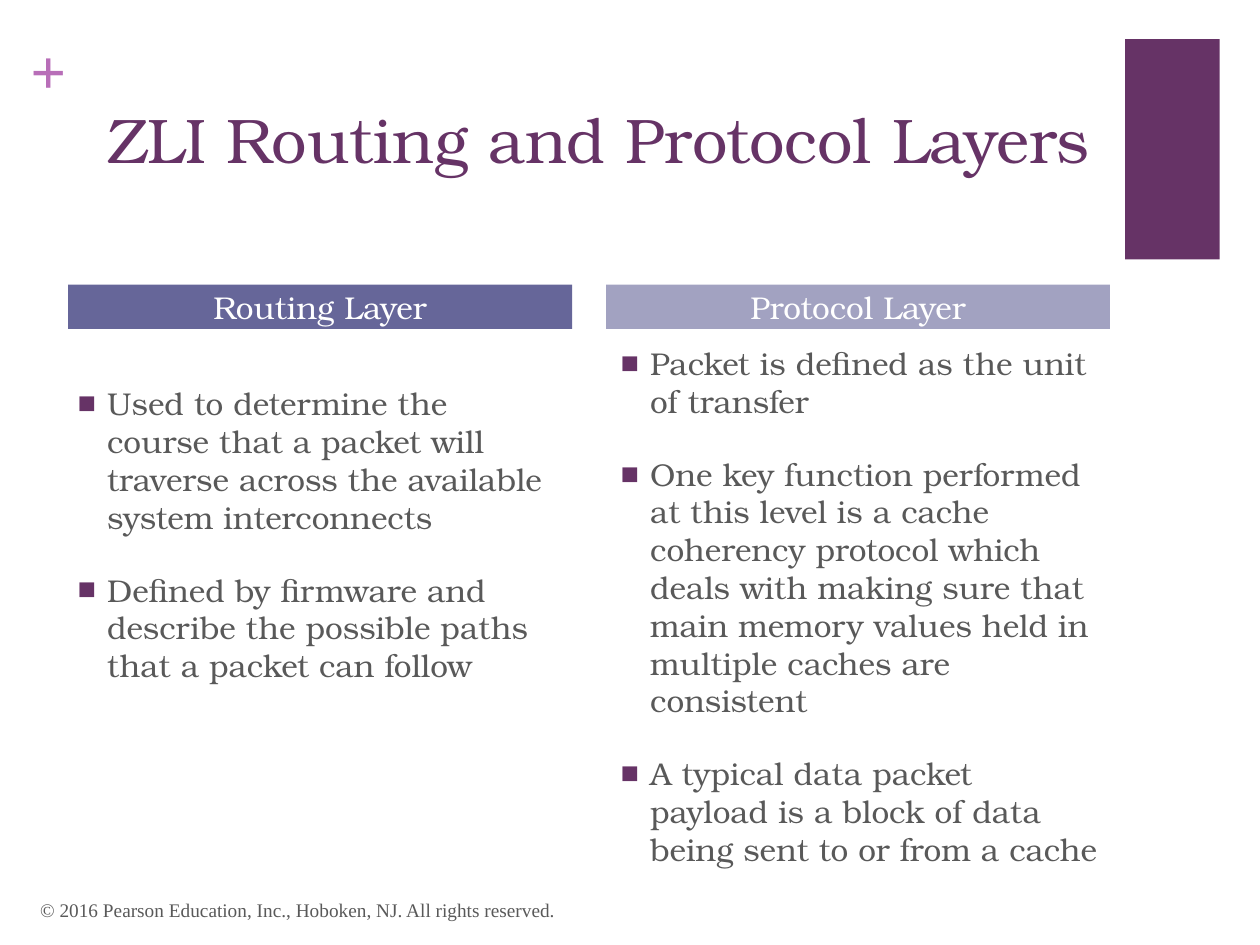
from dataclasses import dataclass

from lxml import etree
from pptx import Presentation, util as u
from pptx.dml.color import RGBColor
from pptx.enum import shapes, text
from pptx.oxml.ns import qn


@dataclass(frozen=True)
class Theme:
    """Colours, fonts and type sizes of the deck."""
    plum: str = "663366"
    orchid: str = "B86EB8"
    slate: str = "666699"
    lavender: str = "A2A2C1"
    grey: str = "595959"
    white: str = "FFFFFF"
    serif: str = "TeX Gyre Bonum"
    roman: str = "Times New Roman"
    title: int = 36
    body: int = 18
    footer: int = 11
    gap: int = 20


T = Theme()
UNIT = u.Inches(0.1)
MARGINS = (1, 0.5, 1, 0.5)
TOP, MIDDLE = text.MSO_ANCHOR.TOP, text.MSO_ANCHOR.MIDDLE
LEFT, CENTER = text.PP_ALIGN.LEFT, text.PP_ALIGN.CENTER

COLUMNS = [
    dict(box=(5.4, 22.6, 40, 3.5), fill=T.slate, heading="Routing Layer",
         offset=(-0.4, 7.4), rows=40.2, items=[
             "Used to determine the course that a packet will traverse across "
             "the available system interconnects",
             "Defined by firmware and describe the possible paths that a packet "
             "can follow"]),
    dict(box=(48.1, 22.6, 40, 3.5), fill=T.lavender, heading="Protocol Layer",
         offset=(0, 4.2), rows=44.9, items=[
             "Packet is defined as the unit of transfer",
             "One key function performed at this level is a cache coherency "
             "protocol which deals with making sure that main memory values "
             "held in multiple caches are consistent",
             "A typical data packet payload is a block of data being sent to or "
             "from a cache"]),
]


def grid(*cells):
    """Turn columns and rows of the 100 by 75 grid into lengths."""
    return [u.Emu(int(c * UNIT)) for c in cells]


def place(sp, box):
    """Set a shape on its grid box."""
    for name, value in zip(("left", "top", "width", "height"), grid(*box)):
        setattr(sp, name, value)


def paint(sp, color):
    """Give a shape a plain fill without a line."""
    sp.fill.solid()
    sp.fill.fore_color.rgb = RGBColor.from_string(color)
    sp.line.fill.background()


def bullet(p):
    """Give a paragraph a square plum bullet with a hanging indent."""
    pPr = p._p.get_or_add_pPr()
    hang = u.Inches(0.25)
    pPr.set("marL", str(hang))
    pPr.set("indent", str(-hang))
    clr = etree.SubElement(pPr, qn("a:buClr"))
    etree.SubElement(clr, qn("a:srgbClr"), val=T.plum)
    etree.SubElement(pPr, qn("a:buFont"), typeface=T.serif)
    etree.SubElement(pPr, qn("a:buChar"), char="■")


def plain(p):
    """Remove the bullet and indent of a paragraph."""
    pPr = p._p.get_or_add_pPr()
    pPr.set("marL", "0")
    pPr.set("indent", "0")
    etree.SubElement(pPr, qn("a:buNone"))


def write(sp, lines, size, color, font=T.serif, bold=False, align=LEFT,
          anchor=TOP, margins=MARGINS, mark=plain):
    """Fill a shape with formatted paragraphs."""
    tf = sp.text_frame
    sides = ("margin_left", "margin_top", "margin_right", "margin_bottom")
    frame = dict(zip(sides, grid(*margins)), word_wrap=True,
                 vertical_anchor=anchor, auto_size=text.MSO_AUTO_SIZE.NONE)
    for name, value in frame.items():
        setattr(tf, name, value)
    for i, line in enumerate(lines):
        p = tf.add_paragraph() if i else tf.paragraphs[0]
        mark(p)
        p.alignment = align
        p.space_before = u.Pt(T.gap if i else 0)
        r = p.add_run()
        r.text = line
        for name, value in dict(name=font, size=u.Pt(size), bold=bold).items():
            setattr(r.font, name, value)
        r.font.color.rgb = RGBColor.from_string(color)


def decoration(s, block, plus):
    """Draw the corner block and the plus sign."""
    sp = s.shapes.add_shape(shapes.MSO_SHAPE.RECTANGLE, *grid(*block))
    sp.shadow.inherit = False
    paint(sp, T.plum)
    write(s.shapes.add_textbox(*grid(*plus)), ["+"], T.title, T.orchid,
          T.roman, bold=True, margins=(0, 0, 0, 0))


def heading(s, box):
    """Write the slide title."""
    sp = s.shapes.title
    place(sp, box)
    write(sp, ["ZLI Routing and Protocol Layers"], T.title, T.plum)


def column(head, body, col):
    """Write one layer: a heading bar with a list below it."""
    x, y, w, h = col["box"]
    dx, dy = col["offset"]
    place(head, col["box"])
    paint(head, col["fill"])
    write(head, [col["heading"]], T.body, T.white, align=CENTER,
          anchor=MIDDLE, margins=(1, 0, 1, 0))
    place(body, (x + dx, y + dy, w, col["rows"]))
    write(body, col["items"], T.body, T.grey, mark=bullet)


def footer(s, box):
    """Write the copyright line."""
    write(s.shapes.add_textbox(*grid(*box)),
          ["© 2016 Pearson Education, Inc., Hoboken, NJ. All rights reserved."],
          T.footer, T.grey, T.roman, anchor=MIDDLE)


def main():
    """Build and save the comparison slide."""
    prs = Presentation()
    prs.slide_width, prs.slide_height = grid(100, 75)
    s = prs.slides.add_slide(prs.slide_layouts[4])
    decoration(s, (89.3, 3.1, 7.5, 17.5), (2.4, 2.5, 2.9, 6.1))
    heading(s, (7.5, 7.5, 82.6, 12.2))
    ph = s.placeholders
    for i, col in enumerate(COLUMNS):
        column(ph[2 * i + 1], ph[2 * i + 2], col)
    footer(s, (2.2, 70.2, 67, 4))
    prs.save("out.pptx")


if __name__ == "__main__":
    main()
